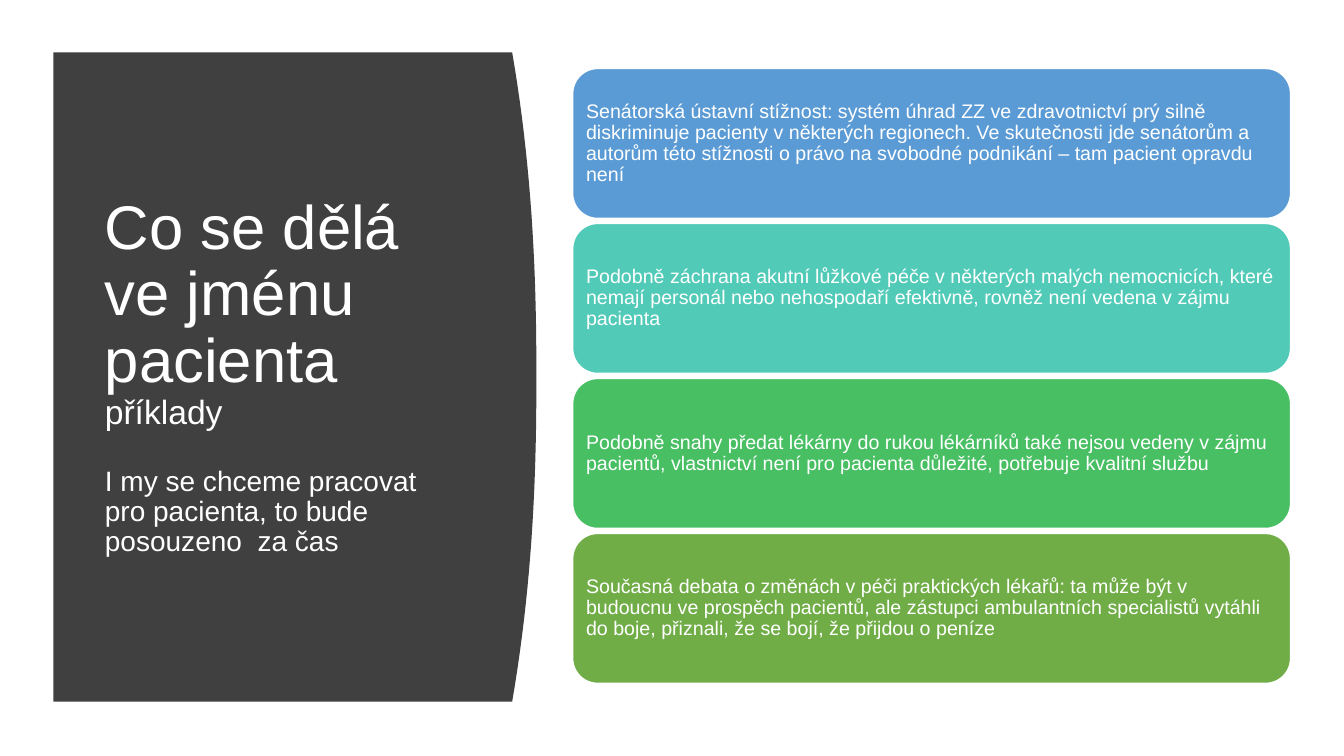
from pptx import Presentation
from pptx import util as u
from pptx.dml.color import RGBColor
from pptx.enum import shapes, text

COLORS = {
    "panel": "404040",
    "white": "FFFFFF",
    "blue": "5B9BD5",
    "teal": "52CAB8",
    "green": "49BF64",
    "olive": "70AD47",
}
FONT = "Arial"

TITLE = [  # wording, size, space before (points)
    ("Co se dělá ve jménu pacienta", 44, 0),
    ("příklady", 24, 0),
    ("I my se chceme pracovat pro pacienta, to bude posouzeno  za čas", 20, 25),
]
EXAMPLES = [
    ("blue", "Senátorská ústavní stížnost: systém úhrad ZZ ve zdravotnictví prý silně "
             "diskriminuje pacienty v některých regionech. Ve skutečnosti jde senátorům "
             "a autorům této stížnosti o právo na svobodné podnikání – tam pacient "
             "opravdu není"),
    ("teal", "Podobně záchrana akutní lůžkové péče v některých malých nemocnicích, "
             "které nemají personál nebo nehospodaří efektivně, rovněž není vedena "
             "v zájmu pacienta"),
    ("green", "Podobně snahy předat lékárny do rukou lékárníků také nejsou vedeny "
              "v zájmu pacientů, vlastnictví není pro pacienta důležité, potřebuje "
              "kvalitní službu"),
    ("olive", "Současná debata o změnách v péči praktických lékařů: ta může být "
              "v budoucnu ve prospěch pacientů, ale zástupci ambulantních specialistů "
              "vytáhli do boje, přiznali, že se bojí, že přijdou o peníze"),
]


def color(name):
    return RGBColor.from_string(COLORS[name])


def paint(shape, fill):
    shape.shadow.inherit = False
    shape.fill.solid()
    shape.fill.fore_color.rgb = color(fill)


def write(para, wording, size):
    para.alignment = text.PP_ALIGN.LEFT
    para.line_spacing = 0.9
    span = para.add_run()
    span.text = wording
    span.font.name = FONT
    span.font.size = u.Pt(size)
    span.font.color.rgb = color("white")


def prepare_frame(frame):
    frame.word_wrap = True
    frame.auto_size = text.MSO_AUTO_SIZE.NONE
    frame.vertical_anchor = text.MSO_ANCHOR.MIDDLE


def add_title_panel(page, left, top, width, height):
    # Dark panel whose right edge bulges outwards
    bulge, steps = 0.24, 40
    edge = []
    for step in range(steps + 1):
        offset = abs(2 * step / steps - 1)
        x = left + width - bulge * offset ** 2.3
        edge.append((u.Inches(x), u.Inches(top + height * step / steps)))
    builder = page.shapes.build_freeform(u.Inches(left), u.Inches(top))
    builder.add_line_segments(edge + [(u.Inches(left), u.Inches(top + height))])
    panel = builder.convert_to_shape()
    paint(panel, "panel")
    panel.line.fill.background()

    # Title in front of the panel
    title = page.shapes.title
    panel.element.addnext(title.element)
    title.left, title.top = u.Inches(left + 0.41), u.Inches(top + 0.6)
    title.width, title.height = u.Inches(width - 1.05), u.Inches(height - 1.2)
    frame = title.text_frame
    prepare_frame(frame)
    for index, (wording, size, before) in enumerate(TITLE):
        para = frame.add_paragraph() if index else frame.paragraphs[0]
        para.space_before = u.Pt(before)
        write(para, wording, size)


def add_example_cards(page, left, top, width, height):
    gap = 0.05
    card_height = (height - gap * (len(EXAMPLES) - 1)) / len(EXAMPLES)
    for index, (fill, wording) in enumerate(EXAMPLES):
        card_top = top + index * (card_height + gap)
        card = page.shapes.add_shape(
            shapes.MSO_SHAPE.ROUNDED_RECTANGLE, u.Inches(left), u.Inches(card_top),
            u.Inches(width), u.Inches(card_height))
        paint(card, fill)
        card.line.color.rgb = color("white")
        card.line.width = u.Pt(1)
        frame = card.text_frame
        prepare_frame(frame)
        frame.margin_left = frame.margin_right = u.Inches(0.06)
        frame.margin_top = frame.margin_bottom = u.Inches(0.06)
        write(frame.paragraphs[0], wording, 14)


def main():
    deck = Presentation()
    deck.slide_width, deck.slide_height = u.Inches(13.33), u.Inches(7.5)
    page = deck.slides.add_slide(deck.slide_layouts.get_by_name("Title Only"))
    add_title_panel(page, 0.53, 0.52, 4.79, 6.44)
    add_example_cards(page, 5.68, 0.68, 7.12, 6.1)
    deck.save("out.pptx")


if __name__ == "__main__":
    main()
